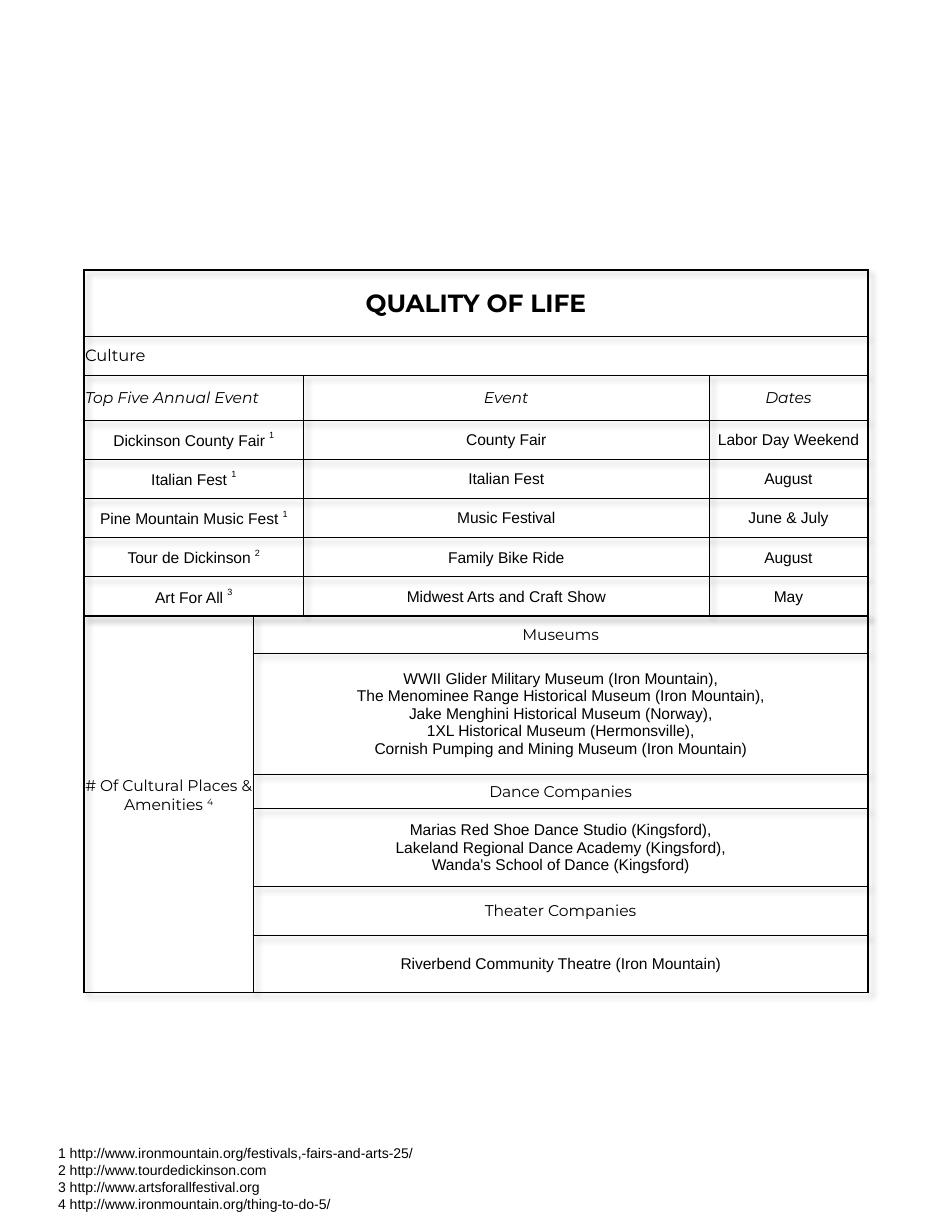
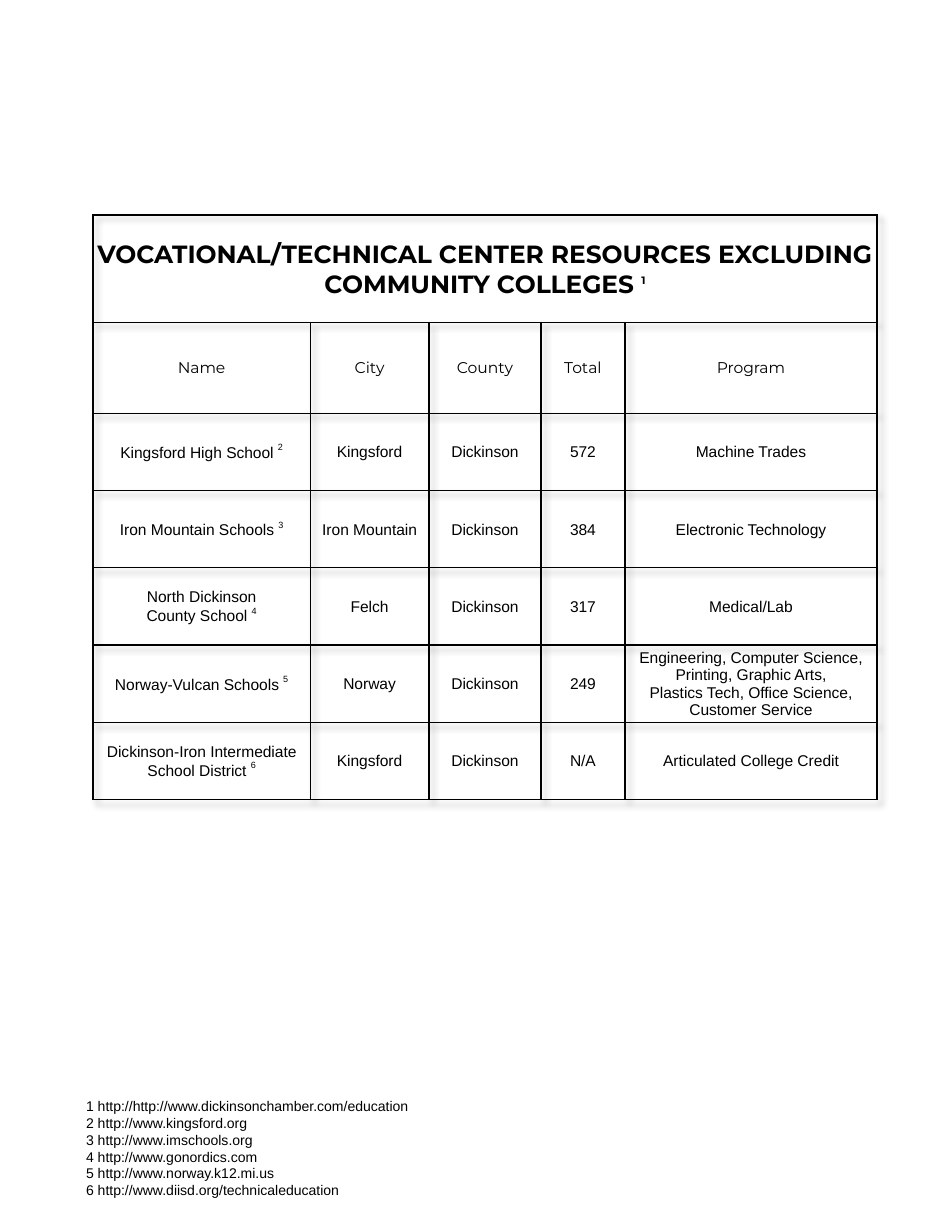
"""Builds two pages of county tables with footnotes."""
from dataclasses import dataclass

from lxml import etree
from pptx import Presentation
from pptx.dml.color import RGBColor
from pptx.enum.text import MSO_ANCHOR, PP_ALIGN
from pptx.oxml.ns import qn
from pptx.util import Inches, Pt

CENTER, LEFT = PP_ALIGN.CENTER, PP_ALIGN.LEFT
MIDDLE = MSO_ANCHOR.MIDDLE
BLACK = "000000"
HEADING_FONT, BODY_FONT = "Montserrat", "Arial"
HEAVY, FINE = 1, 0.5


@dataclass
class Style:
    """Look of the text in a cell or a text box."""
    size: float = 10
    font: str = BODY_FONT
    bold: bool = False
    italic: bool = False
    align: int = CENTER
    mark_size: float = 10
    mark_raise: int = 50


TITLE = Style(16, HEADING_FONT, bold=True, mark_size=12)
SECTION = Style(10.5, HEADING_FONT, align=LEFT)
HEADING = Style(10, HEADING_FONT)
SIDE_HEADING = Style(10, HEADING_FONT, mark_raise=30)
ITALIC = Style(10, HEADING_FONT, italic=True)
ITALIC_LEFT = Style(10, HEADING_FONT, italic=True, align=LEFT)
BODY = Style()
FOOTNOTE = Style(9, align=LEFT)

EVENTS = [
    ("Dickinson County Fair ^1", "County Fair", "Labor Day Weekend"),
    ("Italian Fest ^1", "Italian Fest", "August"),
    ("Pine Mountain Music Fest ^1", "Music Festival", "June & July"),
    ("Tour de Dickinson ^2", "Family Bike Ride", "August"),
    ("Art For All ^3", "Midwest Arts and Craft Show", "May"),
]
PLACES = [
    ("Museums",
     "WWII Glider Military Museum (Iron Mountain),\n"
     "The Menominee Range Historical Museum (Iron Mountain),\n"
     "Jake Menghini Historical Museum (Norway),\n"
     "1XL Historical Museum (Hermonsville),\n"
     "Cornish Pumping and Mining Museum (Iron Mountain)"),
    ("Dance Companies",
     "Marias Red Shoe Dance Studio (Kingsford),\n"
     "Lakeland Regional Dance Academy (Kingsford),\n"
     "Wanda's School of Dance (Kingsford)"),
    ("Theater Companies", "Riverbend Community Theatre (Iron Mountain)"),
]
SCHOOLS = [
    ("Kingsford High School ^2", "Kingsford", "Dickinson", "572", "Machine Trades"),
    ("Iron Mountain Schools ^3", "Iron Mountain", "Dickinson", "384",
     "Electronic Technology"),
    ("North Dickinson\nCounty School ^4", "Felch", "Dickinson", "317", "Medical/Lab"),
    ("Norway-Vulcan Schools ^5", "Norway", "Dickinson", "249",
     "Engineering, Computer Science,\nPrinting, Graphic Arts,\n"
     "Plastics Tech, Office Science, Customer Service"),
    ("Dickinson-Iron Intermediate School District ^6", "Kingsford", "Dickinson", "N/A",
     "Articulated College Credit"),
]
CULTURE_LINKS = [
    "http://www.ironmountain.org/festivals,-fairs-and-arts-25/",
    "http://www.tourdedickinson.com",
    "http://www.artsforallfestival.org",
    "http://www.ironmountain.org/thing-to-do-5/",
]
SCHOOL_LINKS = [
    "http://http://www.dickinsonchamber.com/education",
    "http://www.kingsford.org",
    "http://www.imschools.org",
    "http://www.gonordics.com",
    "http://www.norway.k12.mi.us",
    "http://www.diisd.org/technicaleducation",
]


def color(value):
    """Turn a hex string into a colour."""
    return RGBColor.from_string(value)


def write(frame, text, style):
    """Write lines of text; what follows a caret is a raised note mark."""
    for index, line in enumerate(text.split("\n")):
        para = frame.add_paragraph() if index else frame.paragraphs[0]
        para.alignment = style.align
        font = para.font
        font.size, font.name = Pt(style.size), style.font
        font.bold, font.italic = style.bold, style.italic
        font.color.rgb = color(BLACK)
        words, _, mark = line.partition("^")
        para.add_run().text = words
        if mark:
            span = para.add_run()
            span.text = mark
            span.font.size = Pt(style.mark_size)
            span._r.get_or_add_rPr().set("baseline", str(style.mark_raise * 1000))


def add_border(cell, side, width):
    """Draw one side (L, R, T or B) of a cell."""
    line = etree.SubElement(cell._tc.get_or_add_tcPr(), qn(f"a:ln{side}"),
                            w=str(Pt(width)))
    fill = etree.SubElement(line, qn("a:solidFill"))
    etree.SubElement(fill, qn("a:srgbClr"), val=BLACK)


def add_borders(table, inner, bottom):
    """Draw heavy outer edges and inner lines, leaving merged areas open."""
    last_row, last_column = len(table.rows) - 1, len(table.columns) - 1
    for row in range(last_row + 1):
        for column in range(last_column + 1):
            cell = table.cell(row, column)
            right, low = column, row
            if cell.is_merge_origin:
                right += cell.span_width - 1
                low += cell.span_height - 1
            edges = [("L", column == 0, HEAVY), ("R", right == last_column, HEAVY),
                     ("T", row == 0, HEAVY), ("B", low == last_row, bottom)]
            for side, is_outer, width in edges:
                if is_outer or not cell.is_spanned:
                    add_border(cell, side, width if is_outer else inner)
            cell.fill.background()


def add_shadow(table):
    """Give a table a soft shadow."""
    effects = etree.Element(qn("a:effectLst"))
    shadow = etree.SubElement(effects, qn("a:outerShdw"), blurRad=str(Pt(4)),
                              dist=str(Pt(4)), dir="2700000", algn="tl")
    tint = etree.SubElement(shadow, qn("a:srgbClr"), val=BLACK)
    etree.SubElement(tint, qn("a:alpha"), val="35000")
    table._tbl.tblPr.insert(0, effects)


def add_grid(page, left, top, widths, heights, rows, merges, inner=FINE, bottom=HEAVY):
    """Add a table whose rows hold (text, style) pairs, and return it."""
    table = page.shapes.add_table(
        len(heights), len(widths), Inches(left), Inches(top),
        Inches(sum(widths)), Inches(sum(heights))).table
    table.first_row = table.horz_banding = False
    for column, width in zip(table.columns, widths):
        column.width = Inches(width)
    for row, height in zip(table.rows, heights):
        row.height = Inches(height)
    for (first_row, first_column), (end_row, end_column) in merges:
        table.cell(first_row, first_column).merge(table.cell(end_row, end_column))
    for row, entries in enumerate(rows):
        for column in range(len(widths)):
            text, style = entries[column] if column < len(entries) else ("", BODY)
            cell = table.cell(row, column)
            cell.vertical_anchor = MIDDLE
            cell.margin_left = cell.margin_right = cell.margin_top = Inches(0.01)
            cell.margin_bottom = 0
            write(cell.text_frame, text, style)
    add_borders(table, inner, bottom)
    add_shadow(table)
    return table


def styled(texts, style):
    """Pair each text of a row with one style."""
    return [(text, style) for text in texts]


def add_footnotes(page, left, top, width, height, links):
    """Add the numbered list of sources."""
    box = page.shapes.add_textbox(Inches(left), Inches(top), Inches(width), Inches(height))
    box.text_frame.word_wrap = True
    lines = [f"{number} {link}" for number, link in enumerate(links, 1)]
    write(box.text_frame, "\n".join(lines), FOOTNOTE)


def build_culture_page(page):
    """Lay out annual events and cultural places."""
    event_rows = [
        [("QUALITY OF LIFE", TITLE)],
        [("Culture", SECTION)],
        [("Top Five Annual Event", ITALIC_LEFT), ("Event", ITALIC), ("Dates", ITALIC)],
    ] + [styled(event, BODY) for event in EVENTS]
    add_grid(page, 0.75, 2.41, [1.96, 3.62, 1.42], [0.59, 0.35, 0.4] + [0.35] * 5,
             event_rows, [((0, 0), (0, 2)), ((1, 0), (1, 2))])

    place_rows = []
    for kind, names in PLACES:
        place_rows += [[("", BODY), (kind, HEADING)], [("", BODY), (names, BODY)]]
    place_rows[0][0] = ("# Of Cultural Places &\nAmenities ^4", SIDE_HEADING)
    places = add_grid(page, 0.75, 5.5, [1.51, 5.49], [0.33, 1.08, 0.31, 0.69, 0.44, 0.5],
                      place_rows, [((0, 0), (5, 0))], bottom=FINE)
    places.cell(0, 0).margin_bottom = Inches(0.16)
    add_footnotes(page, 0.42, 10.17, 4.25, 0.71, CULTURE_LINKS)


def build_school_page(page):
    """Lay out vocational and technical schools."""
    school_rows = [
        [("VOCATIONAL/TECHNICAL CENTER RESOURCES EXCLUDING COMMUNITY COLLEGES ^1", TITLE)],
        styled(["Name", "City", "County", "Total", "Program"], HEADING),
    ] + [styled(school, BODY) for school in SCHOOLS]
    add_grid(page, 0.83, 1.92, [1.94, 1.06, 1, 0.75, 2.25], [0.96, 0.81] + [0.69] * 5,
             school_rows, [((0, 0), (0, 4))], inner=HEAVY)
    add_footnotes(page, 0.67, 9.75, 6.02, 1.01, SCHOOL_LINKS)


def main():
    """Build and save the deck."""
    deck = Presentation()
    deck.slide_width, deck.slide_height = Inches(8.5), Inches(11)
    blank = deck.slide_layouts[6]
    for build in (build_culture_page, build_school_page):
        build(deck.slides.add_slide(blank))
    deck.save("out.pptx")


if __name__ == "__main__":
    main()
